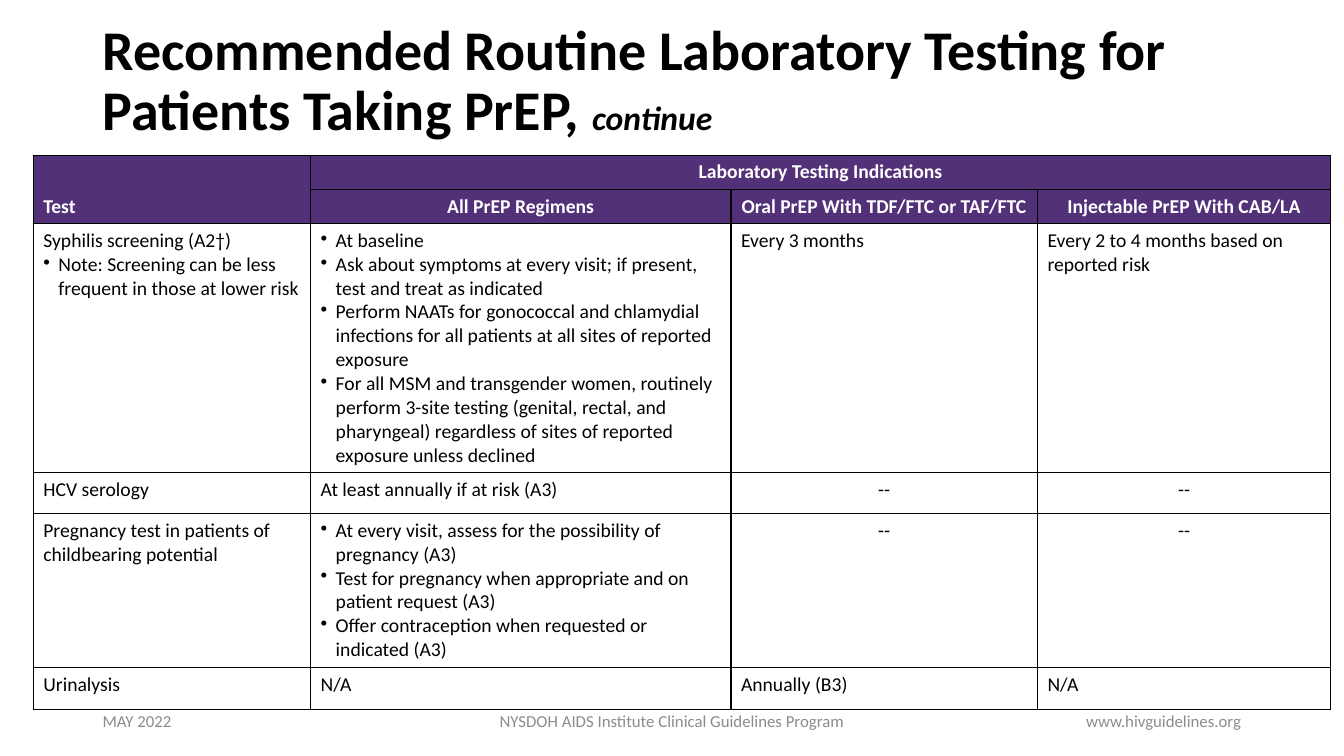
from pptx import Presentation
from pptx.dml.color import RGBColor
from pptx.enum.text import MSO_ANCHOR, MSO_AUTO_SIZE, PP_ALIGN
from pptx.oxml import parse_xml
from pptx.oxml.ns import nsdecls
from pptx.util import Inches, Pt

HUES = {"head": "523178", "white": "FFFFFF", "ink": "000000", "gray": "8C8C8C"}
COLS = [2.75, 4.17, 3.04, 2.91]
ROWS = [0.34, 0.34, 2.46, 0.41, 1.53, 0.41]
LEFT, TOP = 0.33, 1.54
EDGE, FOOT = 0.92, 6.95
WIDE, HIGH = 13.33, 7.5
BUL = "• "

# One list per row; a line that starts with BUL becomes a bullet.
CELLS = [
    ["Test", "Laboratory Testing Indications", "", ""],
    ["", "All PrEP Regimens", "Oral PrEP With TDF/FTC or TAF/FTC",
     "Injectable PrEP With CAB/LA"],
    ["Syphilis screening (A2†)\n"
     "• Note: Screening can be less frequent in those at lower risk",
     "• At baseline\n"
     "• Ask about symptoms at every visit; if present, test and treat as indicated\n"
     "• Perform NAATs for gonococcal and chlamydial infections for all patients "
     "at all sites of reported exposure\n"
     "• For all MSM and transgender women, routinely perform 3-site testing "
     "(genital, rectal, and pharyngeal) regardless of sites of reported exposure "
     "unless declined",
     "Every 3 months", "Every 2 to 4 months based on reported risk"],
    ["HCV serology", "At least annually if at risk (A3)", "--", "--"],
    ["Pregnancy test in patients of childbearing potential",
     "• At every visit, assess for the possibility of pregnancy (A3)\n"
     "• Test for pregnancy when appropriate and on patient request (A3)\n"
     "• Offer contraception when requested or indicated (A3)",
     "--", "--"],
    ["Urinalysis", "N/A", "Annually (B3)", "N/A"],
]


def style(font, size, hue, bold=False):
    font.name, font.size, font.bold = "Calibri", Pt(size), bold
    font.color.rgb = RGBColor.from_string(HUES[hue])


def fill_cell(cell, text, head, center):
    """Write the text, bullets, borders and fill of one table cell."""
    cell.text = text.replace(BUL, "")
    for line, para in zip(text.split("\n"), cell.text_frame.paragraphs):
        if line.startswith(BUL):
            props = para._p.get_or_add_pPr()
            props.set("marL", str(Inches(0.15)))
            props.set("indent", str(-Inches(0.15)))
            props.append(parse_xml(f'<a:buChar {nsdecls("a")} char="•"/>'))
        para.alignment = PP_ALIGN.CENTER if center else PP_ALIGN.LEFT
        style(para.font, 14, "white" if head else "ink", head)
        for run in para.runs:
            style(run.font, 14, "white" if head else "ink", head)
    props = cell._tc.get_or_add_tcPr()
    for side in "LRTB":
        props.append(parse_xml(
            f'<a:ln{side} {nsdecls("a")} w="{Pt(1)}"><a:solidFill>'
            f'<a:srgbClr val="{HUES["ink"]}"/></a:solidFill></a:ln{side}>'))
    if head:
        cell.fill.solid()
        cell.fill.fore_color.rgb = RGBColor.from_string(HUES["head"])
    else:
        cell.fill.background()


deck = Presentation()
deck.slide_width, deck.slide_height = Inches(WIDE), Inches(HIGH)
slide = deck.slides.add_slide(deck.slide_layouts[5])

# Title
title = slide.shapes.title
title.left, title.top = Inches(EDGE), Inches(0.09)
title.width, title.height = Inches(11.5), Inches(1.45)
frame = title.text_frame
frame.word_wrap = True
frame.auto_size = MSO_AUTO_SIZE.NONE
frame.vertical_anchor = MSO_ANCHOR.MIDDLE
para = frame.paragraphs[0]
para.alignment = PP_ALIGN.LEFT
para.line_spacing = 0.9
for text, size in [
    ("Recommended Routine Laboratory Testing for Patients Taking PrEP, ", 40),
    ("continue", 24),
]:
    run = para.add_run()
    run.text = text
    style(run.font, size, "ink", True)
    run.font.italic = size == 24

# Testing table
table = slide.shapes.add_table(
    len(ROWS), len(COLS), Inches(LEFT), Inches(TOP),
    Inches(sum(COLS)), Inches(sum(ROWS))).table
table.first_row = table.horz_banding = False
for col, width in zip(table.columns, COLS):
    col.width = Inches(width)
for row, height in zip(table.rows, ROWS):
    row.height = Inches(height)
for r, row in enumerate(CELLS):
    for c, text in enumerate(row):
        head = r < 2
        fill_cell(table.cell(r, c), text, head, text == "--" or head and c > 0)
table.cell(0, 0).merge(table.cell(1, 0))
table.cell(0, 1).merge(table.cell(0, 3))
table.cell(0, 0).vertical_anchor = MSO_ANCHOR.BOTTOM

# Footer
for text, left, width, align in [
    ("MAY 2022", EDGE, 3, PP_ALIGN.LEFT),
    ("NYSDOH AIDS Institute Clinical Guidelines Program",
     (WIDE - 4.5) / 2, 4.5, PP_ALIGN.CENTER),
    ("www.hivguidelines.org", WIDE - EDGE - 3, 3, PP_ALIGN.RIGHT),
]:
    box = slide.shapes.add_textbox(
        Inches(left), Inches(FOOT), Inches(width), Inches(0.4))
    frame = box.text_frame
    frame.text = text
    frame.word_wrap = True
    frame.vertical_anchor = MSO_ANCHOR.MIDDLE
    para = frame.paragraphs[0]
    para.alignment = align
    style(para.runs[0].font, 12, "gray")

deck.save("out.pptx")
